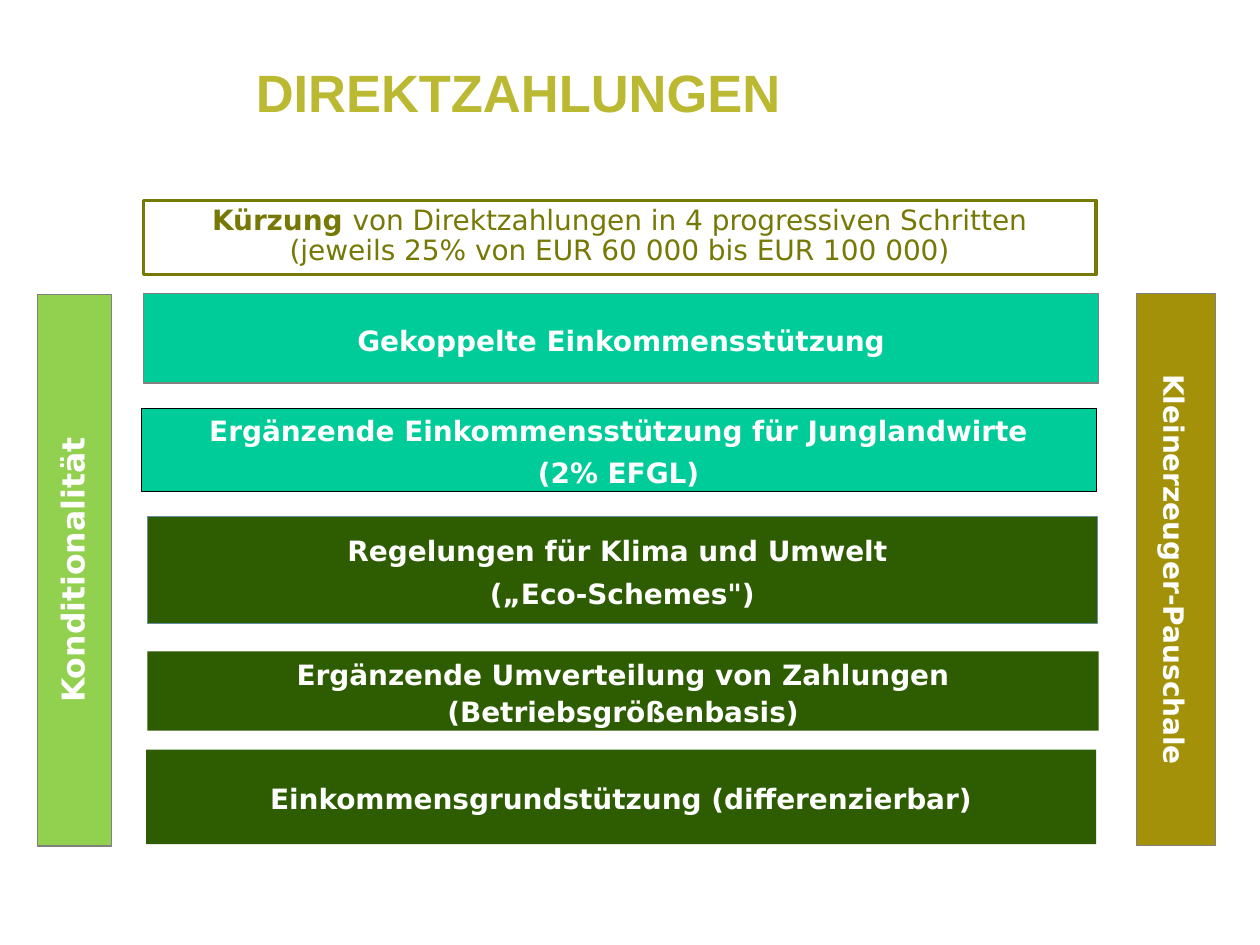
"""Build the slide on the layers of direct payments."""
from dataclasses import dataclass

import pptx
import pptx.dml.color
import pptx.enum.shapes
import pptx.enum.text
import pptx.util

ALIGN = pptx.enum.text.PP_ALIGN
ANCHOR = pptx.enum.text.MSO_ANCHOR


@dataclass(frozen=True)
class Theme:
    """Hold the colours, fonts and type sizes of the slide."""

    title: str = "BBB831"
    white: str = "FFFFFF"
    black: str = "000000"
    grey: str = "808080"
    blue_grey: str = "67909F"
    olive: str = "767905"
    mustard: str = "A39109"
    lime: str = "92D050"
    mint: str = "00CC99"
    forest: str = "2E5C00"
    title_font: str = "Arial"
    body_font: str = "DejaVu Sans"
    title_size: int = 30
    bar_size: int = 18
    body_size: int = 16


THEME = Theme()
WIDTH = pptx.util.Inches(10)
HEIGHT = pptx.util.Inches(7.5)

# Each band: text, (left, top, width, height) in percent, fill, line colour, line width, wrap.
BANDS = (
    ("Einkommensgrundstützung (differenzierbar)",
     (11.6, 79.33, 75.4, 10), THEME.forest, None, 0, False),
    ("Ergänzende Umverteilung von Zahlungen\v(Betriebsgrößenbasis)",
     (11.7, 68.93, 75.5, 8.4), THEME.forest, None, 0, False),
    ("Regelungen für Klima und Umwelt \n(„Eco-Schemes\")",
     (11.7, 54.67, 75.4, 11.33), THEME.forest, THEME.blue_grey, 0.75, False),
    ("Ergänzende Einkommensstützung für Junglandwirte\n(2% EFGL)",
     (11.2, 43.2, 75.8, 8.8), THEME.mint, THEME.black, 0.25, True),
    ("Gekoppelte Einkommensstützung",
     (11.4, 31.07, 75.8, 9.47), THEME.mint, THEME.grey, 0.75, False),
)


def rgb(value):
    """Return the colour for a hexadecimal value."""
    return pptx.dml.color.RGBColor.from_string(value)


def place(box):
    """Turn percentages of the slide into left, top, width and height."""
    return [round(share * side / 100) for share, side in zip(box, (WIDTH, HEIGHT) * 2)]


def write_text(shape, text, *, lead="", size=THEME.body_size, color=THEME.white,
               font=THEME.body_font, bold=True, align=ALIGN.CENTER,
               anchor=ANCHOR.MIDDLE, wrap=True, spacing=1.1, before=3.2):
    """Write lines as paragraphs, with an optional bold lead before the first."""
    frame = shape.text_frame
    frame.auto_size = pptx.enum.text.MSO_AUTO_SIZE.NONE
    frame.word_wrap = wrap
    frame.vertical_anchor = anchor
    for index, line in enumerate(text.split("\n")):
        paragraph = frame.add_paragraph() if index else frame.paragraphs[0]
        paragraph.alignment = align
        paragraph.line_spacing = spacing
        paragraph.space_before = pptx.util.Pt(before if index else 0)
        paragraph.text = line
        if lead and not index:
            paragraph.text = lead
            paragraph.add_run().text = line
        for position, run in enumerate(paragraph.runs):
            is_lead = bool(lead) and index == position == 0
            run.font.name = font
            run.font.size = pptx.util.Pt(size)
            run.font.bold = bold or is_lead
            run.font.color.rgb = rgb(color)


def add_box(slide, box, fill=None, line=None, line_width=0.75):
    """Add a flat rectangle with an optional fill and outline."""
    shape = slide.shapes.add_shape(
        pptx.enum.shapes.MSO_SHAPE.RECTANGLE, *place(box))
    shape.shadow.inherit = False
    if fill:
        shape.fill.solid()
        shape.fill.fore_color.rgb = rgb(fill)
    else:
        shape.fill.background()
    if line:
        shape.line.color.rgb = rgb(line)
        shape.line.width = pptx.util.Pt(line_width)
    else:
        shape.line.fill.background()
    return shape


def add_title(slide, text):
    """Move and fill the title placeholder."""
    title = slide.shapes.title
    title.left, title.top, title.width, title.height = place((19.3, 5.73, 75.6, 10.53))
    write_text(title, text, size=THEME.title_size, color=THEME.title,
               font=THEME.title_font, align=ALIGN.LEFT, anchor=ANCHOR.TOP, spacing=1)


def add_bands(slide):
    """Add the stacked payment bands from bottom to top."""
    for text, box, fill, line, line_width, wrap in BANDS:
        write_text(add_box(slide, box, fill, line, line_width), text, wrap=wrap)


def add_reduction(slide):
    """Add the outlined note on the reduction of payments."""
    shape = add_box(slide, (11.4, 21.2, 75.6, 7.87), line=THEME.olive, line_width=2)
    write_text(shape, "von Direktzahlungen in 4 progressiven Schritten\n"
               "(jeweils 25% von EUR 60 000 bis EUR 100 000)",
               lead="Kürzung ", color=THEME.olive, bold=False,
               anchor=ANCHOR.TOP, spacing=0.9, before=0)


def add_side_bars(slide):
    """Add the two upright bars beside the bands."""
    right = add_box(slide, (90.2, 31.07, 6.3, 58.4), THEME.mustard, THEME.grey)
    write_text(right, "Kleinerzeuger-Pauschale")
    right.element.txBody.bodyPr.set("vert", "vert")
    left = add_box(slide, (-16, 56.4, 43.8, 7.87), THEME.lime, THEME.grey)
    left.rotation = 270
    write_text(left, "Konditionalität", size=THEME.bar_size, spacing=0.9)


def main():
    """Build and save the presentation."""
    presentation = pptx.Presentation()
    presentation.slide_width, presentation.slide_height = WIDTH, HEIGHT
    slide = presentation.slides.add_slide(presentation.slide_layouts[5])
    add_title(slide, "DIREKTZAHLUNGEN")
    add_bands(slide)
    add_reduction(slide)
    add_side_bars(slide)
    presentation.save("out.pptx")


if __name__ == "__main__":
    main()
